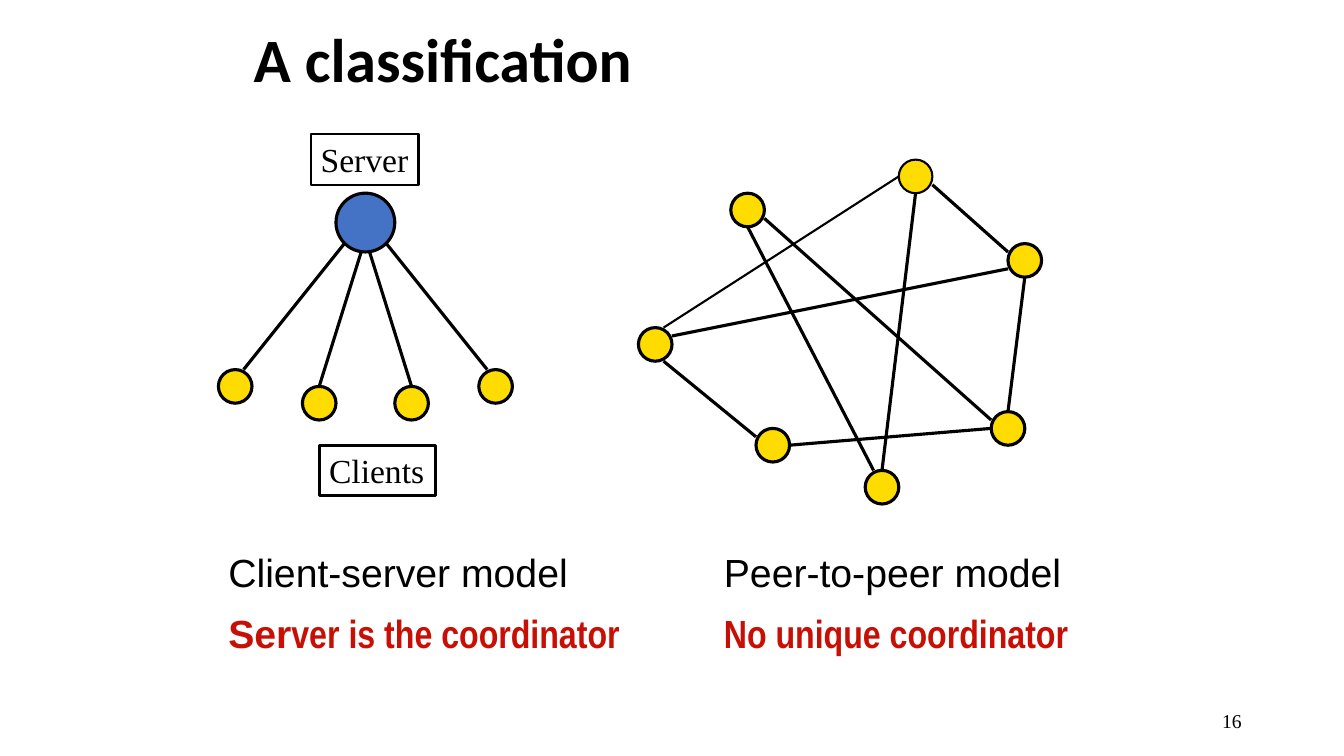
from pptx import Presentation
from pptx import util as u
from pptx.dml import color
from pptx.enum import shapes, text
from pptx.oxml import ns
from lxml import etree

COLORS = {"ink": "000000", "paper": "FFFFFF", "server": "4472C4",
          "node": "FFDC00", "accent": "C70F05"}
NODE = 24


class Sketch:
    """Style and drawing methods for the current slide."""
    heading, sans, narrow, serif = "Calibri", "Arial", "Arial Narrow", "Times New Roman"
    stroke = 2.25

    def __init__(self, page):
        self.page = page

    def rgb(self, name):
        return color.RGBColor.from_string(COLORS[name])

    def style(self, span, font, size, tint="ink", bold=False):
        span.font.name, span.font.size, span.font.bold = font, u.Pt(size), bold
        span.font.color.rgb = self.rgb(tint)

    def outline(self, item, width):
        item.line.color.rgb = self.rgb("ink")
        item.line.width = u.Pt(width)

    def title(self, words, *bounds):
        box = self.page.shapes.title
        box.left, box.top, box.width, box.height = map(u.Pt, bounds)
        frame = box.text_frame
        frame.text = words
        frame.vertical_anchor = text.MSO_ANCHOR.MIDDLE
        para = frame.paragraphs[0]
        para.alignment, para.line_spacing = text.PP_ALIGN.LEFT, 0.9
        self.style(para.runs[0], self.heading, 44, bold=True)

    def textbox(self, words, *bounds):
        box = self.page.shapes.add_textbox(*map(u.Pt, bounds))
        box.text_frame.text = words
        box.text_frame.word_wrap = False
        return box

    def caption(self, model, remark, *bounds):
        """Model name with a red remark below, given as (words, font) pairs."""
        frame = self.textbox(model, *bounds).text_frame
        self.style(frame.paragraphs[0].runs[0], self.sans, 28)
        para = frame.add_paragraph()
        for words, font in remark:
            span = para.add_run()
            span.text = words
            self.style(span, font, 28, "accent", True)
        for para in frame.paragraphs:
            para.line_spacing = 1.3

    def label(self, words, *bounds, width=stroke):
        box = self.textbox(words, *bounds)
        self.outline(box, width)
        self.style(box.text_frame.paragraphs[0].runs[0], self.serif, 24)

    def number(self, words, *bounds):
        frame = self.textbox(words, *bounds).text_frame
        frame.word_wrap = True
        frame.vertical_anchor = text.MSO_ANCHOR.MIDDLE
        frame.paragraphs[0].alignment = text.PP_ALIGN.RIGHT
        self.style(frame.paragraphs[0].runs[0], self.serif, 14)

    def node(self, left, top, size=NODE, fill="node", width=stroke):
        circle = self.page.shapes.add_shape(
            shapes.MSO_SHAPE.OVAL, *map(u.Pt, (left, top, size, size)))
        circle.shadow.inherit = False
        circle.fill.solid()
        circle.fill.fore_color.rgb = self.rgb(fill)
        self.outline(circle, width)

    def link(self, *ends, width=stroke):
        line = self.page.shapes.add_connector(
            shapes.MSO_CONNECTOR.STRAIGHT, *map(u.Pt, ends))
        self.outline(line, width)
        etree.SubElement(line._element.spPr, ns.qn("a:effectLst"))


def main():
    deck = Presentation()
    deck.slide_width, deck.slide_height = u.Pt(960), u.Pt(540)
    sketch = Sketch(deck.slides.add_slide(deck.slide_layouts[5]))
    sketch.title("A classification", 174, 0, 612, 90)

    # Client-server model: client corner, then link start and end
    sketch.node(240, 138, 42, "server")
    for client, start, end in [((156, 264), (246, 174), (174, 264)),
                               ((216, 276), (258, 180), (228, 276)),
                               ((282, 276), (264, 180), (294, 276)),
                               ((342, 264), (276, 174), (348, 264))]:
        sketch.node(*client)
        sketch.link(*start, *end)
    sketch.label("Server", 222, 96, 77, 36, width=1.5)
    sketch.label("Clients", 228, 318, 83, 36)
    sketch.caption("Client-server model",
                   [("Ser", sketch.sans), ("ver is the coordinator", sketch.narrow)],
                   156, 378, 297.5, 132)

    # Peer-to-peer model: the top peer and one of its links are thinner
    for peer in [(522, 138), (720, 174), (540, 306), (708, 294), (456, 234), (618, 336)]:
        sketch.node(*peer)
    sketch.node(642, 114, width=1.5)
    sketch.link(642, 126, 474, 234, width=1.5)
    for ends in [(546, 156, 708, 300), (720, 180, 666, 132), (564, 318, 708, 306),
                 (534, 162, 624, 336), (480, 240, 720, 192), (654, 138, 630, 336),
                 (732, 198, 720, 294), (474, 258, 540, 312)]:
        sketch.link(*ends)
    sketch.caption("Peer-to-peer model", [("No unique coordinator", sketch.narrow)],
                   510, 378, 263, 94)

    # Page number
    sketch.number("16", 678, 500.5, 216, 29)
    deck.save("out.pptx")


if __name__ == "__main__":
    main()
